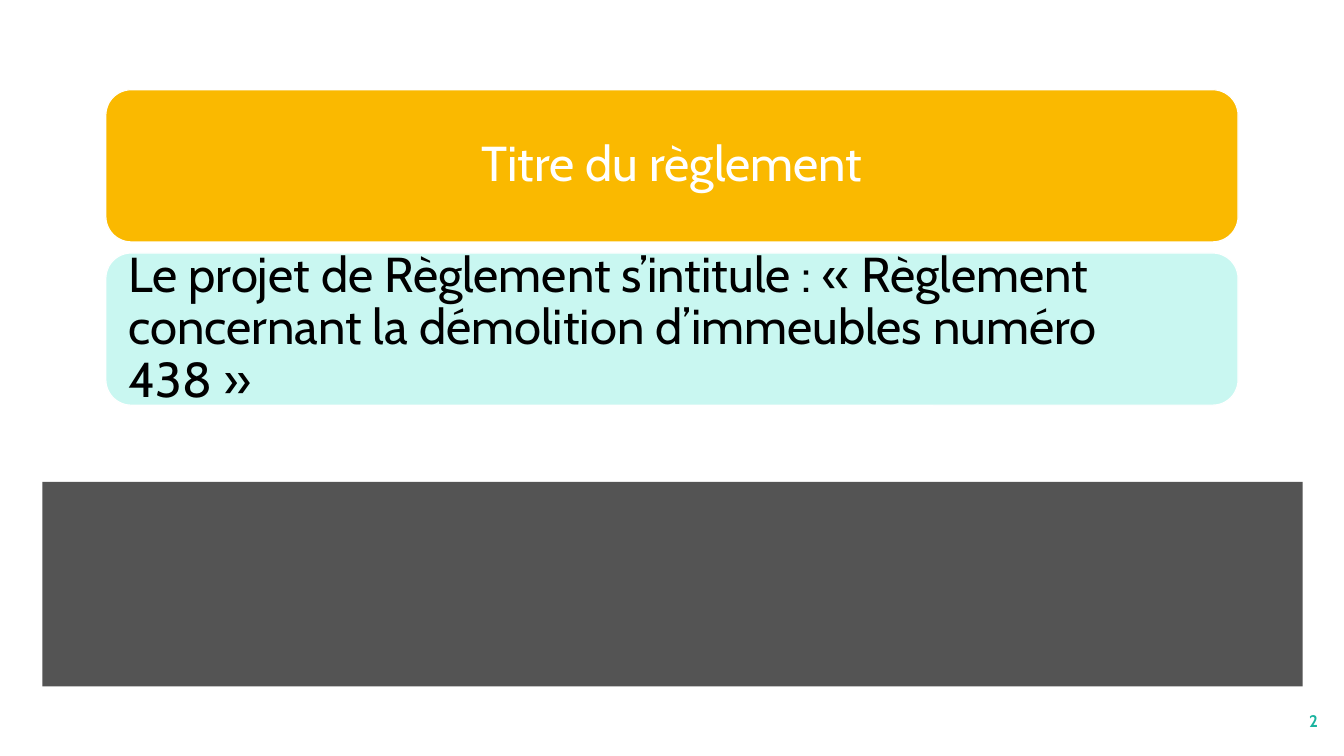
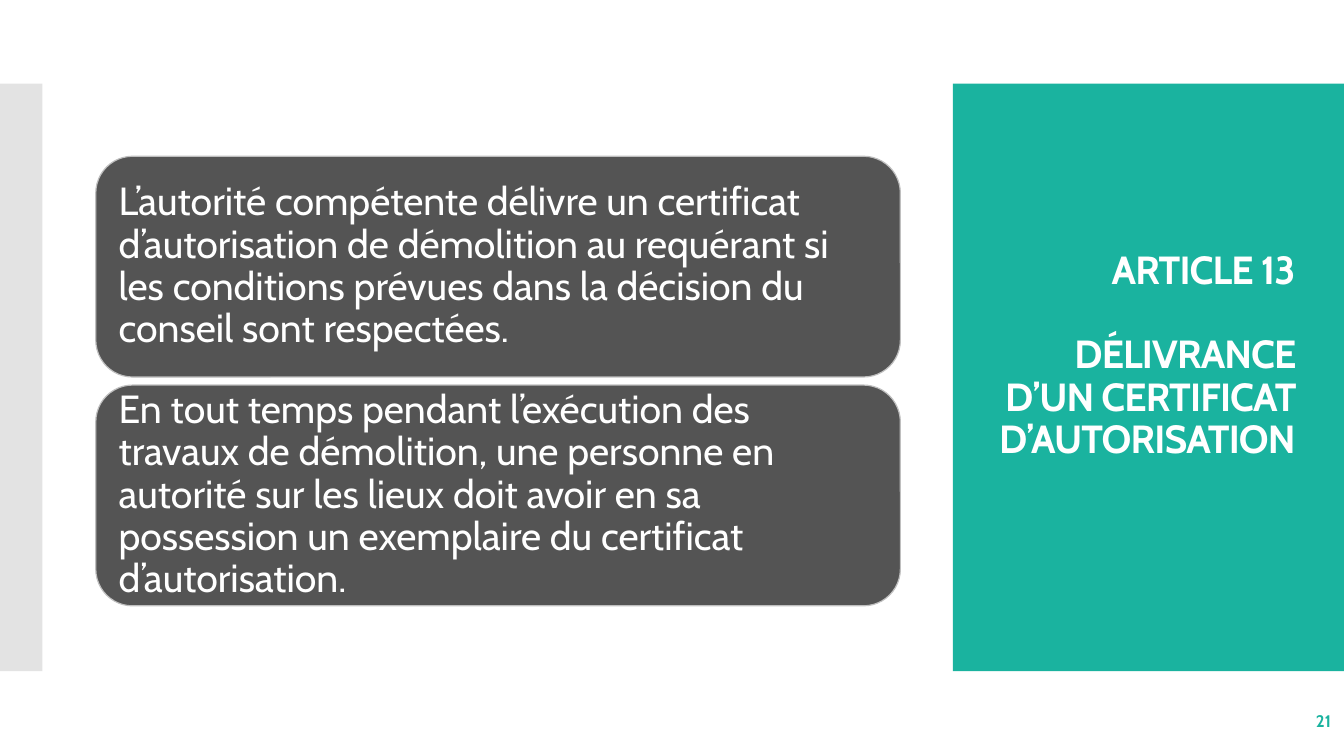
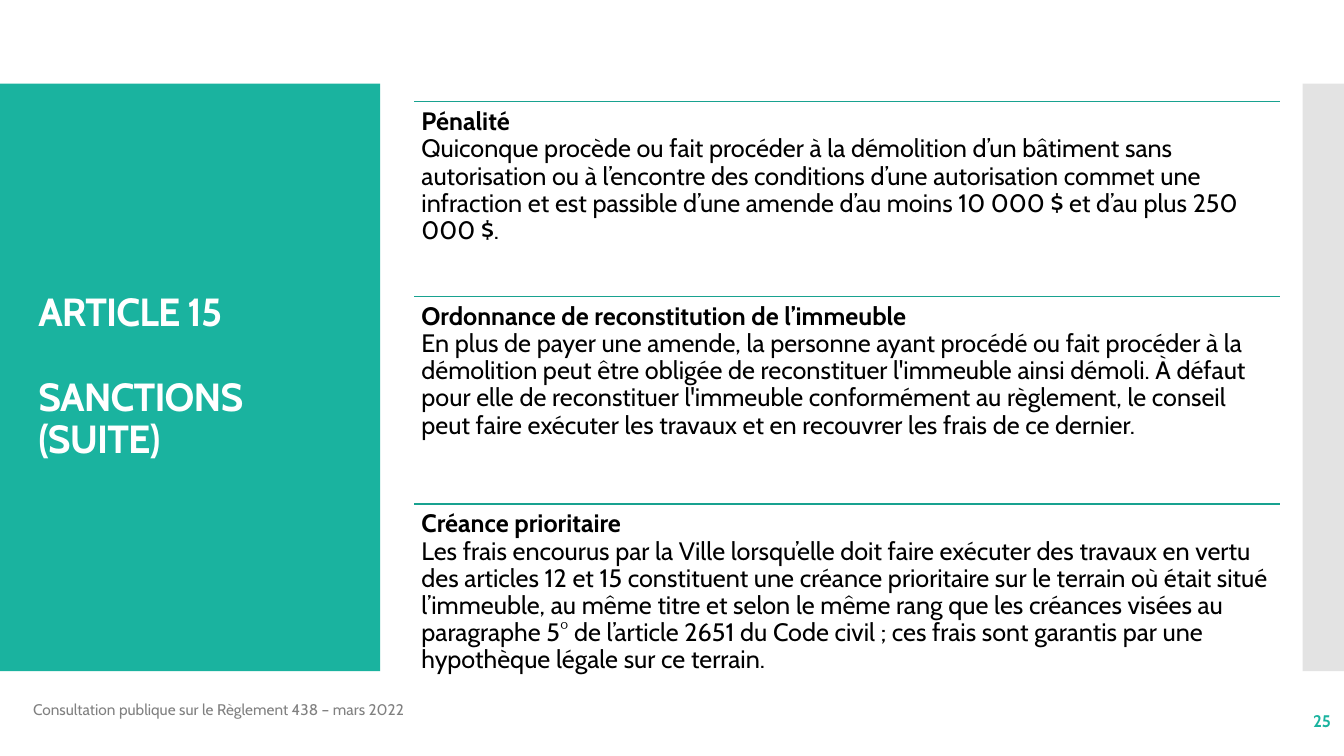
from dataclasses import dataclass
from typing import NamedTuple

from lxml import etree
from pptx import Presentation
from pptx import util as u
from pptx.dml.color import RGBColor
from pptx.enum import shapes, text
from pptx.oxml.ns import qn

PX = 9144  # EMU in one px, 100 px to the inch


@dataclass(frozen=True)
class Theme:
    font: str = "Cabin"
    teal: str = "1AB39F"
    rule: str = "18A290"
    strip: str = "C8C8C8"
    slate: str = "545454"
    amber: str = "FAB900"
    mint: str = "C9F7F1"
    edge: str = "BFBFBF"
    muted: str = "808080"
    white: str = "FFFFFF"
    black: str = "000000"
    banner_size: int = 35
    title_size: int = 28
    body_size: int = 18
    number_size: int = 12
    footer_size: int = 11
    tight: float = 0.9
    hairline: float = 0.85


class Box(NamedTuple):
    left: int
    top: int
    width: int
    height: int

    def emu(self):
        return [side * PX for side in self]


THEME = Theme()
PAGE = Box(0, 0, 1333, 750)
BAND_TOP, BAND_HEIGHT = 83, 583
STRIP_WIDTH = 42
LEFT, RIGHT, CENTER = (text.PP_ALIGN.LEFT, text.PP_ALIGN.RIGHT,
                       text.PP_ALIGN.CENTER)


def apply(target, formats):
    for name, value in formats.items():
        setattr(target, name, value)


def set_frame(frame, insets=(10, 5, 10, 5), anchor=text.MSO_ANCHOR.MIDDLE):
    """Insets run left, top, right, bottom."""
    sides = ("margin_left", "margin_top", "margin_right", "margin_bottom")
    apply(frame, {"word_wrap": True, "auto_size": text.MSO_AUTO_SIZE.NONE,
                  "vertical_anchor": anchor,
                  **{side: inset * PX for side, inset in zip(sides, insets)}})


def write(paragraph, words, size, color, bold=False, align=LEFT, spacing=1.0, before=0):
    paragraph.text = words
    apply(paragraph, {"alignment": align, "line_spacing": spacing,
                      "space_before": u.Pt(before), "space_after": u.Pt(0)})
    for run in paragraph.runs:
        apply(run.font, {"name": THEME.font, "size": u.Pt(size), "bold": bold})
        run.font.color.rgb = RGBColor.from_string(color)


def add_block(slide, box, fill, kind=shapes.MSO_SHAPE.RECTANGLE, edge=None):
    block = slide.shapes.add_shape(kind, *box.emu())
    block.shadow.inherit = False
    block.fill.solid()
    block.fill.fore_color.rgb = RGBColor.from_string(fill)
    if edge:
        block.line.color.rgb = RGBColor.from_string(edge)
        block.line.width = u.Pt(THEME.hairline)
    else:
        block.line.fill.background()
    return block


def add_text_box(slide, box, **frame_formats):
    frame = slide.shapes.add_textbox(*box.emu()).text_frame
    set_frame(frame, **frame_formats)
    return frame


def add_strip(slide, left):
    """Half-transparent grey band at the edge of the page."""
    strip = add_block(slide, Box(left, BAND_TOP, STRIP_WIDTH, BAND_HEIGHT), THEME.strip)
    color = strip.fill._xPr.find(qn("a:solidFill")).find(qn("a:srgbClr"))
    etree.SubElement(color, qn("a:alpha")).set("val", "50000")


def add_title_panel(slide, panel, article, subject, align=LEFT, lift=0):
    """Teal panel under the title; lift is extra room left below the text."""
    add_block(slide, panel, THEME.teal)
    title = slide.shapes.title
    title.element.getparent().append(title.element)
    place = Box(panel.left + 28, panel.top + 40, 322, panel.height - 80)
    apply(title, dict(zip(("left", "top", "width", "height"), place.emu())))
    frame = title.text_frame
    set_frame(frame, insets=(10, 5, 10, 5 + lift))
    lines = ((frame.paragraphs[0], article, 0), (frame.add_paragraph(), subject, 30))
    for paragraph, words, before in lines:
        write(paragraph, words, THEME.title_size, THEME.white, bold=True,
              align=align, spacing=THEME.tight, before=before)
        for run in paragraph.runs:
            run._r.get_or_add_rPr().set("spc", "-60")


def add_page_number(slide, number, right):
    frame = add_text_box(slide, Box(right - 167, 695, 167, 40))
    write(frame.paragraphs[0], number, THEME.number_size, THEME.teal, bold=True, align=RIGHT)


def add_footer(slide, words):
    frame = add_text_box(slide, Box(23, 684, 800, 40))
    write(frame.paragraphs[0], words, THEME.footer_size, THEME.muted)


def add_cards(slide, area, gap, cards, size, edge, inset):
    """Stack rounded cards of equal height; a card is words, fill, ink, alignment."""
    height = (area.height - gap * (len(cards) - 1)) // len(cards)
    for row, (words, fill, ink, align) in enumerate(cards):
        box = Box(area.left, area.top + row * (height + gap), area.width, height)
        card = add_block(slide, box, fill, shapes.MSO_SHAPE.ROUNDED_RECTANGLE, edge)
        set_frame(card.text_frame, insets=(inset,) * 4)
        write(card.text_frame.paragraphs[0], words, size, ink, align=align,
              spacing=THEME.tight)


def add_ruled_sections(slide, area, sections):
    """Sections are offset from the top of the area, heading and body."""
    ends = [offset for offset, _, _ in sections[1:]] + [area.height]
    for (offset, heading, body), end in zip(sections, ends):
        box = Box(area.left, area.top + offset, area.width, end - offset)
        left, top, width, _ = box.emu()
        rule = slide.shapes.add_connector(shapes.MSO_CONNECTOR.STRAIGHT,
                                          left, top, left + width, top)
        rule.line.color.rgb = RGBColor.from_string(THEME.rule)
        rule.line.width = u.Pt(THEME.hairline)
        etree.SubElement(rule._element.spPr, qn("a:effectLst"))
        frame = add_text_box(slide, box, insets=(7,) * 4, anchor=text.MSO_ANCHOR.TOP)
        write(frame.paragraphs[0], heading, THEME.body_size, THEME.black,
              bold=True, spacing=THEME.tight)
        write(frame.add_paragraph(), body, THEME.body_size, THEME.black,
              spacing=THEME.tight)


def regulation_title_slide(slide):
    add_block(slide, Box(42, 478, 1250, 203), THEME.slate)
    add_page_number(slide, "2", right=1317)
    add_cards(slide, Box(105, 89, 1123, 313), 11, [
        ("Titre du règlement", THEME.amber, THEME.white, CENTER),
        ("Le projet de Règlement s’intitule : «\u00a0Règlement concernant la "
         "démolition d’immeubles numéro 438\u00a0»", THEME.mint, THEME.black, LEFT),
    ], THEME.banner_size, THEME.white, inset=15)


def certificate_slide(slide):
    panel = Box(945, BAND_TOP, 388, BAND_HEIGHT)
    add_title_panel(slide, panel, "ARTICLE 13", "DÉLIVRANCE D’UN CERTIFICAT D’AUTORISATION",
                    align=RIGHT, lift=42)
    add_strip(slide, 0)
    add_page_number(slide, "21", right=1330)
    conditions = (
        "L’autorité compétente délivre un certificat d’autorisation de démolition au "
        "requérant si les conditions prévues dans la décision du conseil sont respectées.",
        "En tout temps pendant l’exécution des travaux de démolition, une personne en "
        "autorité sur les lieux doit avoir en sa possession un exemplaire du certificat "
        "d’autorisation.")
    add_cards(slide, Box(95, 155, 798, 446), 8,
              [(words, THEME.slate, THEME.white, LEFT) for words in conditions],
              THEME.title_size, THEME.edge, inset=12)


def sanctions_slide(slide):
    panel = Box(0, BAND_TOP, 377, BAND_HEIGHT)
    add_title_panel(slide, panel, "ARTICLE 15", "SANCTIONS\v(SUITE)")
    add_strip(slide, PAGE.width - STRIP_WIDTH + 1)
    add_footer(slide, "Consultation publique sur le Règlement 438 – mars 2022")
    add_ruled_sections(slide, Box(411, 101, 859, 563), [
        (0, "Pénalité",
         "Quiconque procède ou fait procéder à la démolition d’un bâtiment sans "
         "autorisation ou à l’encontre des conditions d’une autorisation commet une "
         "infraction et est passible d’une amende d’au moins 10 000 $ et d’au plus "
         "250 000 $."),
        (193, "Ordonnance de reconstitution de l’immeuble",
         "En plus de payer une amende, la personne ayant procédé ou fait procéder à la "
         "démolition peut être obligée de reconstituer l'immeuble ainsi démoli. À défaut "
         "pour elle de reconstituer l'immeuble conformément au règlement, le conseil "
         "peut faire exécuter les travaux et en recouvrer les frais de ce dernier."),
        (399, "Créance prioritaire",
         "Les frais encourus par la Ville lorsqu’elle doit faire exécuter des travaux en "
         "vertu des articles 12 et 15 constituent une créance prioritaire sur le terrain "
         "où était situé l’immeuble, au même titre et selon le même rang que les créances "
         "visées au paragraphe 5° de l’article 2651 du Code civil ; ces frais sont "
         "garantis par une hypothèque légale sur ce terrain."),
    ])
    add_page_number(slide, "25", right=1330)


def main():
    deck = Presentation()
    deck.slide_width, deck.slide_height = PAGE.width * PX, PAGE.height * PX
    title_only, blank = deck.slide_layouts[5], deck.slide_layouts[6]
    for build, layout in ((regulation_title_slide, blank),
                          (certificate_slide, title_only),
                          (sanctions_slide, title_only)):
        build(deck.slides.add_slide(layout))
    deck.save("out.pptx")


if __name__ == "__main__":
    main()
